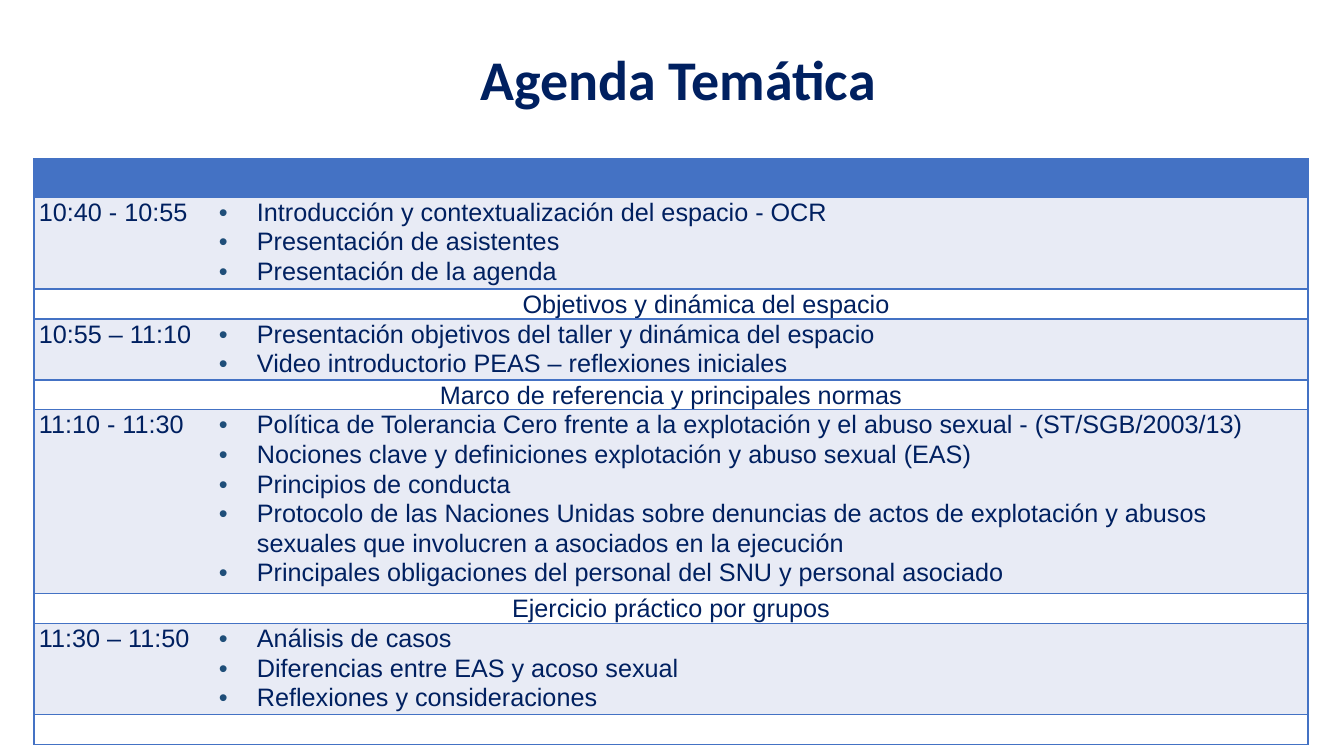
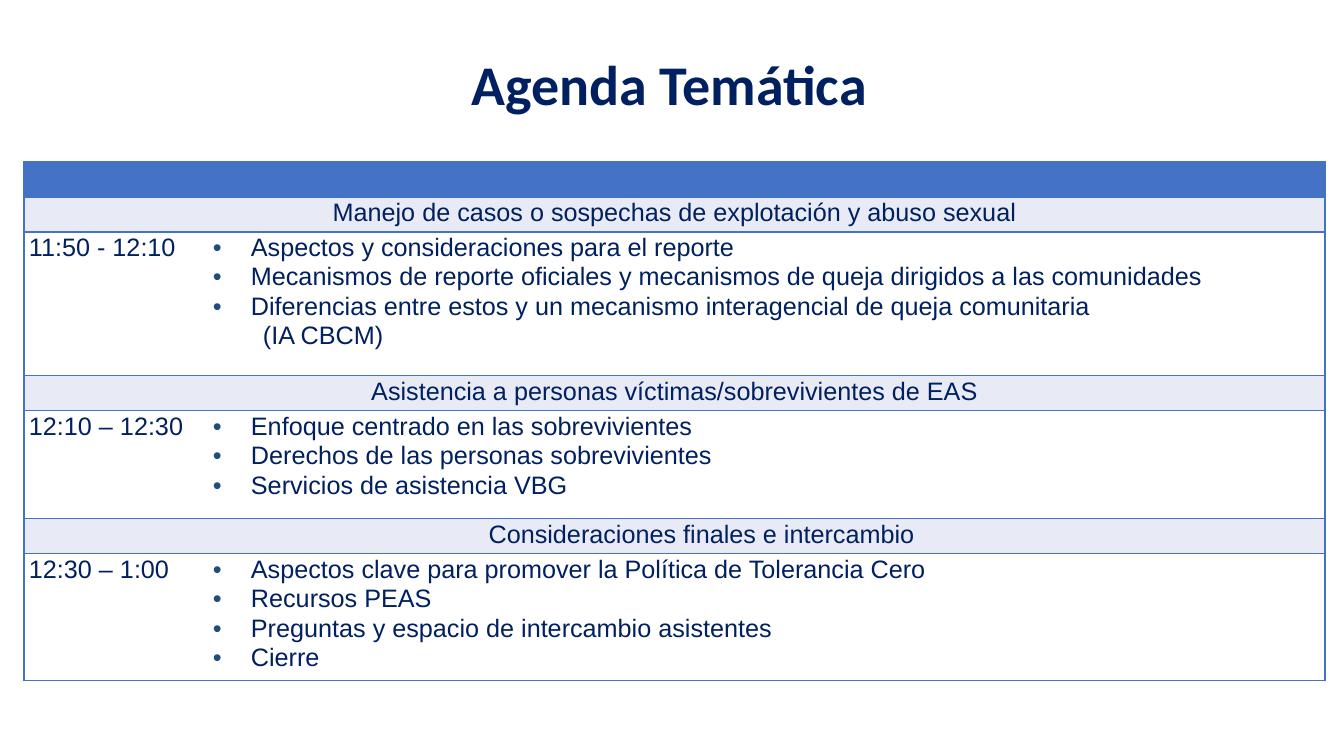
import pptx
import pptx.util
import pptx.dml.color
import pptx.enum.text
import pptx.oxml.ns
import lxml.etree

PX = 914400 / 100.8
COLORS = {"navy": "002060", "blue": "4472C4", "pale": "E8EBF5",
          "white": "FFFFFF", "bullet": "1F4E79"}
ALIGN = pptx.enum.text.PP_ALIGN
qn = pptx.oxml.ns.qn


def px(n):
    return pptx.util.Emu(round(n * PX))


def rgb(name):
    return pptx.dml.color.RGBColor.from_string(COLORS[name])


def sub(parent, tag, **attrs):
    return lxml.etree.SubElement(parent, qn(tag), attrs)


def write(p, text, size=18, font="Arial", color="navy", bold=False,
          align=ALIGN.LEFT, spacing=1.05, bullet=False, margin=0):
    """Fill one paragraph with formatted text."""
    p.alignment = align
    p.line_spacing = spacing
    pPr = p._p.get_or_add_pPr()
    pPr.set("marL", str(px(margin)))
    pPr.set("indent", str(px(-margin if bullet else 0)))
    if bullet:
        sub(sub(pPr, "a:buClr"), "a:srgbClr", val=COLORS["bullet"])
        sub(pPr, "a:buFont", typeface="Arial")
        sub(pPr, "a:buChar", char="•")
    r = p.add_run()
    r.text = text
    r.font.size = pptx.util.Pt(size)
    r.font.name = font
    r.font.bold = bold
    r.font.color.rgb = rgb(color)


class Deck:
    """Shared style and the current slide."""

    def __init__(self):
        self.prs = pptx.Presentation()
        self.prs.slide_width, self.prs.slide_height = px(1344), px(756)
        self.s = None

    def slide(self):
        self.s = self.prs.slides.add_slide(self.prs.slide_layouts[6])

    def title(self, text, x, y):
        tf = self.s.shapes.add_textbox(px(x), px(y), px(672), px(78)).text_frame
        tf.word_wrap = True
        write(tf.paragraphs[0], text, size=40, font="Calibri", bold=True,
              align=ALIGN.CENTER, spacing=1.0)

    def cell(self, cell, fill, sides):
        """Set fill, insets and the borders on the given sides."""
        cell.margin_left = cell.margin_right = px(5)
        cell.margin_top = cell.margin_bottom = 0
        cell.fill.solid()
        cell.fill.fore_color.rgb = rgb(fill)
        tcPr = cell._tc.get_or_add_tcPr()
        for i, side in enumerate("LRTB"):
            ln = sub(tcPr, "a:ln" + side, w="12700")
            if side in sides:
                sub(sub(ln, "a:solidFill"), "a:srgbClr", val=COLORS["blue"])
            else:
                sub(ln, "a:noFill")
            tcPr.insert(i, ln)

    def band(self, tbl, i, fill, text, shift):
        """A row merged across both columns, with a centred heading."""
        for c in tbl.rows[i].cells:
            self.cell(c, fill, "LRTB")
        tbl.cell(i, 0).merge(tbl.cell(i, 1))
        p = tbl.cell(i, 0).text_frame.paragraphs[0]
        if text:
            write(p, text, align=ALIGN.CENTER, margin=shift)
        else:
            sub(p._p, "a:endParaRPr", sz="1200")

    def session(self, tbl, i, fill, time, items):
        """A time and its bulleted topics; a tuple adds an unbulleted line."""
        self.cell(tbl.cell(i, 0), fill, "LTB")
        self.cell(tbl.cell(i, 1), fill, "RTB")
        write(tbl.cell(i, 0).text_frame.paragraphs[0], time)
        tf = tbl.cell(i, 1).text_frame
        for n, item in enumerate(items):
            p = tf.add_paragraph() if n else tf.paragraphs[0]
            if isinstance(item, tuple):
                write(p, item[0], margin=50)
            else:
                write(p, item, bullet=True, margin=38)

    def agenda(self, x, y, cols, rows):
        """Rows are (height, heading, shift) or (height, time, topics)."""
        heights = [row[0] for row in rows]
        tbl = self.s.shapes.add_table(len(rows), 2, px(x), px(y), px(sum(cols)),
                                      px(sum(heights))).table
        tbl.first_row = tbl.horz_banding = False
        for col, w in zip(tbl.columns, cols):
            col.width = px(w)
        for i, (h, text, body) in enumerate(rows):
            tbl.rows[i].height = px(h)
            fill = "blue" if i == 0 else "pale" if i % 2 else "white"
            draw = self.session if isinstance(body, list) else self.band
            draw(tbl, i, fill, text, body)


def main():
    d = Deck()

    # First part of the agenda
    d.slide()
    d.agenda(34, 159, [180, 1094], [
        (38, "", 0),
        (92, "10:40 - 10:55", [
            "Introducción y contextualización del espacio - OCR",
            "Presentación de asistentes",
            "Presentación de la agenda"]),
        (30, "Objetivos y dinámica del espacio", 70),
        (61, "10:55 – 11:10", [
            "Presentación objetivos del taller y dinámica del espacio",
            "Video introductorio PEAS – reflexiones iniciales"]),
        (29, "Marco de referencia y principales normas", 0),
        (184, "11:10 - 11:30", [
            "Política de Tolerancia Cero frente a la explotación y el abuso "
            "sexual - (ST/SGB/2003/13)",
            "Nociones clave y definiciones explotación y abuso sexual (EAS)",
            "Principios de conducta",
            "Protocolo de las Naciones Unidas sobre denuncias de actos de "
            "explotación y abusos sexuales que involucren a asociados en la "
            "ejecución",
            "Principales obligaciones del personal del SNU y personal asociado"]),
        (29, "Ejercicio práctico por grupos", 0),
        (91, "11:30 – 11:50", [
            "Análisis de casos",
            "Diferencias entre EAS y acoso sexual",
            "Reflexiones y consideraciones"]),
        (30, "", 0),
    ])
    d.title("Agenda Temática", 342, 40)

    # Second part of the agenda
    d.slide()
    d.agenda(24, 162, [184, 1117], [
        (35, "", 0),
        (35, "Manejo de casos o sospechas de explotación y abuso sexual", 0),
        (144, "11:50 - 12:10", [
            "Aspectos y consideraciones para el reporte",
            "Mecanismos de reporte oficiales y mecanismos de queja dirigidos "
            "a las comunidades",
            "Diferencias entre estos y un mecanismo interagencial de queja "
            "comunitaria",
            ("(IA CBCM)",)]),
        (35, "Asistencia a personas víctimas/sobrevivientes de EAS", 0),
        (108, "12:10 – 12:30", [
            "Enfoque centrado en las sobrevivientes",
            "Derechos de las personas sobrevivientes",
            "Servicios de asistencia VBG"]),
        (35, "Consideraciones finales e intercambio", 54),
        (119, "12:30 – 1:00", [
            "Aspectos clave para promover la Política de Tolerancia Cero",
            "Recursos PEAS",
            "Preguntas y espacio de intercambio asistentes",
            "Cierre"]),
    ])
    d.title("Agenda Temática", 333, 45)

    d.prs.save("out.pptx")


if __name__ == "__main__":
    main()
